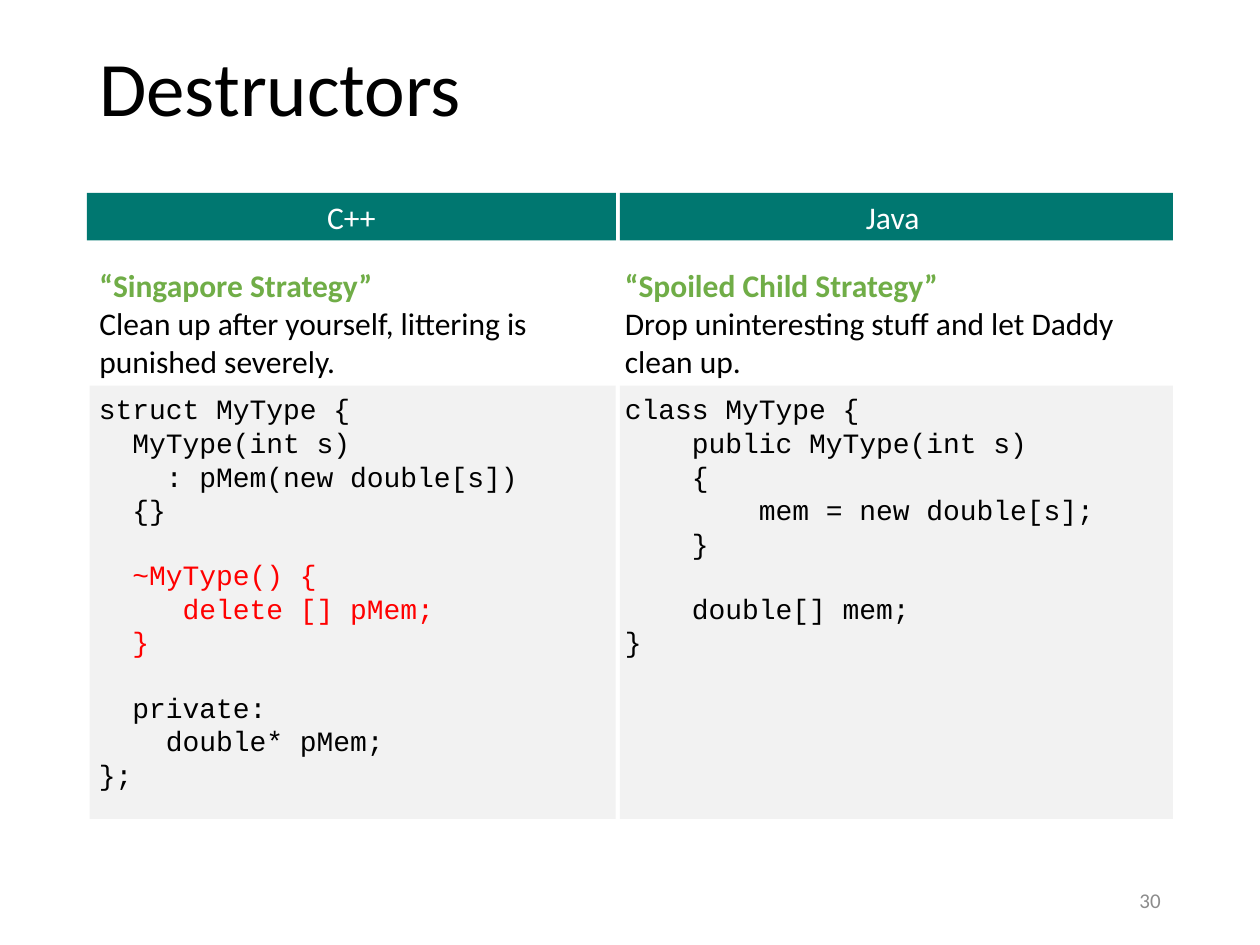
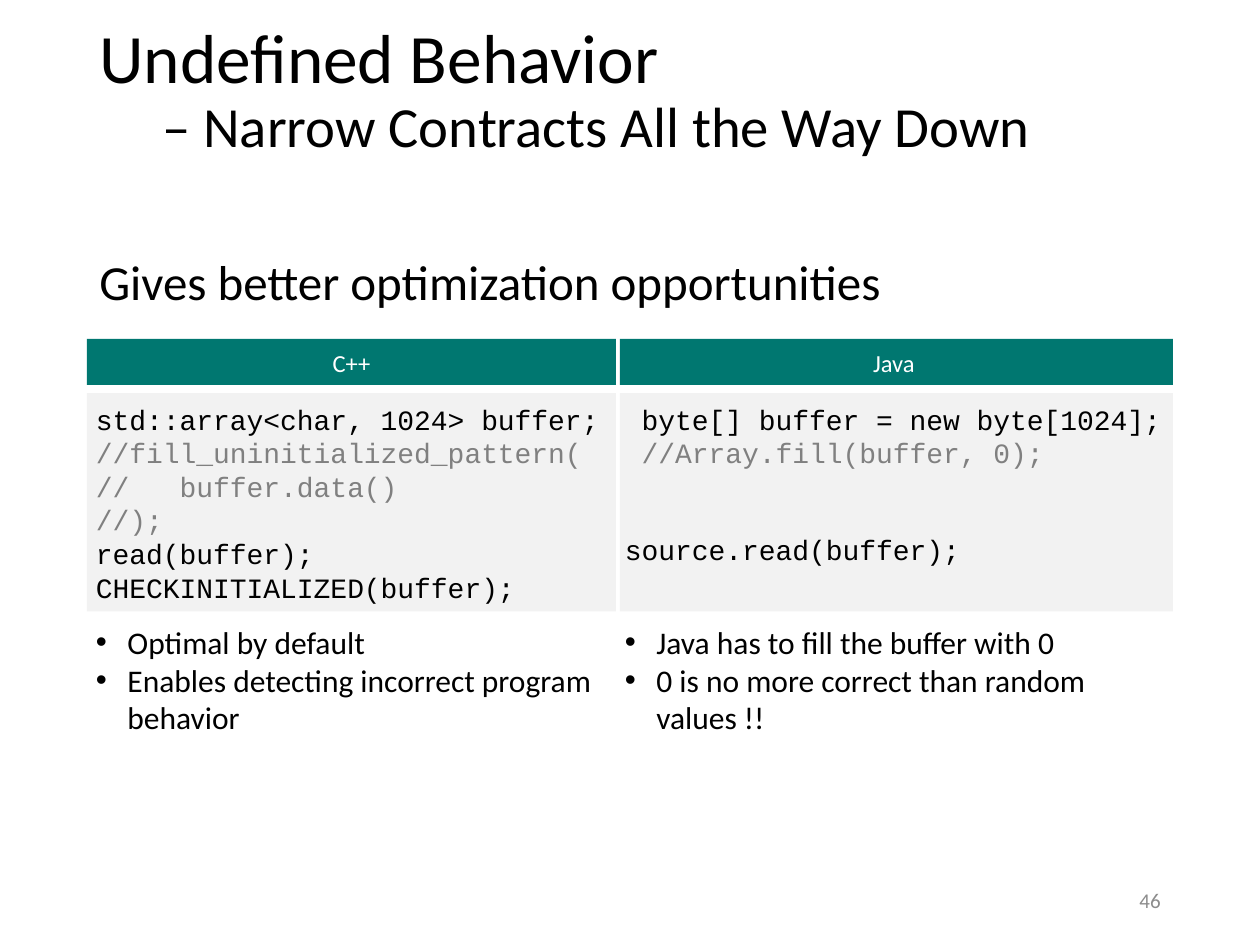
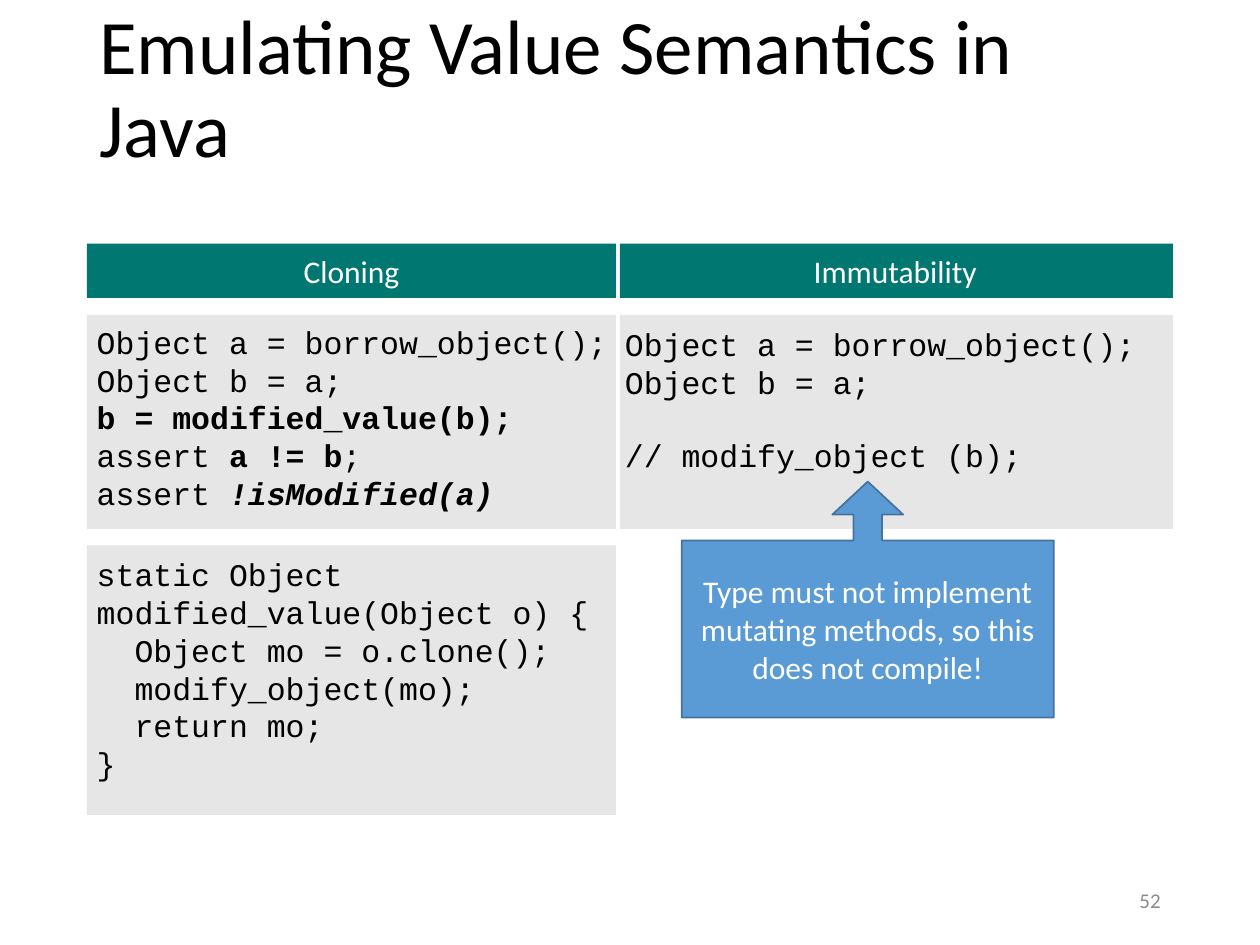
from lxml import etree
from pptx import Presentation
from pptx import util as u
from pptx.dml.color import RGBColor
from pptx.enum import shapes, text
from pptx.oxml.ns import qn

COLORS = {
    "black": "000000", "white": "FFFFFF", "teal": "007770", "green": "70AD47",
    "pale": "F2F2F2", "gray": "E7E6E6", "comment": "808080", "number": "8C8C8C",
    "red": "FF0000", "blue": "5B9BD5", "blue_edge": "43739E",
}
BODY, CODE = "Calibri", "Courier New"
CODE_LEADING = 1.13
SLIDE_WIDTH, SLIDE_HEIGHT = 720, 540
# Left edge, width and right inset of the band for the two columns
LEFT, RIGHT = (49.7, 302.3), (354.2, 316.1)
TITLE_BOX = (49.7, 0, 620.6, 104.4)
BULLET_INDENT = 18
PLAIN_INSETS = (7.2, 3.6, 7.2, 3.6)


def rgb(name):
    return RGBColor.from_string(COLORS[name])


def in_column(column, top, height):
    left, width = column
    return left, top, width, height


def add_box(page, box, fill=None, insets=PLAIN_INSETS, anchor="TOP", kind="RECTANGLE"):
    """Add a text box, or a filled shape when a fill is named."""
    lengths = [u.Pt(value) for value in box]
    if fill:
        shape = page.shapes.add_shape(shapes.MSO_SHAPE[kind], *lengths)
        shape.shadow.inherit = False
        shape.fill.solid()
        shape.fill.fore_color.rgb = rgb(fill)
        shape.line.fill.background()
    else:
        shape = page.shapes.add_textbox(*lengths)
    frame = shape.text_frame
    frame.word_wrap = True
    frame.vertical_anchor = text.MSO_ANCHOR[anchor]
    for side, inset in zip(("left", "top", "right", "bottom"), insets):
        setattr(frame, f"margin_{side}", u.Pt(inset))
    return shape


def add_span(para, words, color="black", **style):
    span = para.add_run()
    span.text = words
    for name, value in {"name": BODY, **style}.items():
        setattr(span.font, name, u.Pt(value) if name == "size" else value)
    span.font.color.rgb = rgb(color)


def next_para(frame, **layout):
    """Return the empty first paragraph, or a new one, with its layout set."""
    para = frame.paragraphs[0]
    if para.runs:
        para = frame.add_paragraph()
    for name, value in {"alignment": text.PP_ALIGN.LEFT, **layout}.items():
        setattr(para, name, value)
    return para


def set_bullet(para):
    layout = para._p.get_or_add_pPr()
    layout.set("marL", str(u.Pt(BULLET_INDENT)))
    layout.set("indent", str(-u.Pt(BULLET_INDENT)))
    etree.SubElement(layout, qn("a:buFont"), typeface="Arial")
    etree.SubElement(layout, qn("a:buChar"), char="•")


def add_title(page, *lines):
    """Each line is its words and its size; later lines start at a tab."""
    frame = add_box(page, TITLE_BOX, anchor="MIDDLE").text_frame
    para = next_para(frame, line_spacing=0.9)
    for index, (words, size) in enumerate(lines):
        if index:
            para.add_line_break()
            words = "\t" + words
        add_span(para, words, size=size)


def add_page_number(page, number):
    frame = add_box(page, (508.3, 500, 162, 29), anchor="MIDDLE").text_frame
    para = next_para(frame, alignment=text.PP_ALIGN.RIGHT)
    add_span(para, str(number), "number", size=12)


def add_bands(page, names, top, height, size, inset, right_inset):
    for column, name, side in zip((LEFT, RIGHT), names, (0, right_inset)):
        band = add_box(page, in_column(column, top, height), "teal", (0, inset, side, inset))
        para = next_para(band.text_frame, alignment=text.PP_ALIGN.CENTER)
        add_span(para, name, "white", size=size)


def add_code(page, box, lines, size, insets, fill="pale"):
    """A line is a string or (words, style) spans; an empty line opens a gap."""
    frame = add_box(page, box, fill, insets).text_frame
    gap = 0
    for line in lines:
        if not line:
            gap += size * CODE_LEADING
            continue
        para = next_para(frame, space_before=u.Pt(gap))
        gap = 0
        spans = [(line, {})] if isinstance(line, str) else line
        for words, style in spans:
            add_span(para, words, name=CODE, size=size, **style)


def add_strategy(page, column, inset, name, advice):
    frame = add_box(page, in_column(column, 152, 34), insets=(inset, 0, 0, 0)).text_frame
    add_span(next_para(frame), name, "green", size=18, bold=True)
    add_span(next_para(frame), advice, size=18)


def add_bullets(page, box, inset, lines):
    frame = add_box(page, box, insets=(inset, 6.5, 0, 0)).text_frame
    for line in lines:
        para = next_para(frame)
        set_bullet(para)
        add_span(para, line, size=18)


def add_callout(page, box, words):
    callout = add_box(page, box, "blue", anchor="MIDDLE", kind="UP_ARROW_CALLOUT")
    callout.line.color.rgb = rgb("blue_edge")
    callout.line.width = u.Pt(1)
    for index, value in enumerate((0.12, 0.15, 0.14, 0.75)):
        callout.adjustments[index] = value
    para = next_para(callout.text_frame, alignment=text.PP_ALIGN.CENTER)
    add_span(para, words, "white", size=18)


def build_destructors(page):
    add_title(page, ("Destructors", 44))
    add_bands(page, ("C++", "Java"), 110.2, 27.2, 18, 2.9, 4.3)
    add_strategy(page, LEFT, 7.2, "“Singapore Strategy”",
                 "Clean up after yourself, littering is punished severely.")
    add_strategy(page, RIGHT, 2.9, "“Spoiled Child Strategy”",
                 "Drop uninteresting stuff and let Daddy clean up.")
    red = {"color": "red"}
    add_code(page, (51.2, 220.4, 300.6, 247.6), [
        "struct MyType {",
        "  MyType(int s)",
        "    : pMem(new double[s])",
        "  {}",
        "",
        [("  ~MyType() {", red)],
        [("     delete [] pMem;", red)],
        [("  }", red)],
        "",
        "  private:",
        "    double* pMem;",
        "};",
    ], 16, (5.3, 3.6, 0, 3.6))
    add_code(page, in_column(RIGHT, 220.4, 247.6), [
        "class MyType {",
        "    public MyType(int s)",
        "    {",
        "        mem = new double[s];",
        "    }",
        "",
        "    double[] mem;",
        "}",
    ], 16, (2.9, 3.6, 0, 3.6))


def build_undefined_behavior(page):
    add_title(page, ("Undefined Behavior", 39.6), ("– Narrow Contracts All the Way Down", 32.4))
    claim = add_box(page, (49.7, 144, 620.6, 44)).text_frame
    add_span(next_para(claim, line_spacing=0.9), "Gives better optimization opportunities", size=28)
    add_bands(page, ("C++", "Java"), 193.7, 26.3, 14, 5, 2.9)
    comment = {"color": "comment"}
    add_code(page, in_column(LEFT, 224.6, 124.8), [
        "std::array<char, 1024> buffer;",
        [("//fill_uninitialized_pattern(", comment)],
        [("//   buffer.data()", comment)],
        [("//);", comment)],
        "read(buffer);",
        "CHECKINITIALIZED(buffer);",
    ], 16, (5.2, 5.2, 0, 5.2))
    add_code(page, in_column(RIGHT, 224.6, 124.8), [
        " byte[] buffer = new byte[1024];",
        [(" //Array.fill(buffer, 0);", comment)],
        "",
        "",
        "source.read(buffer);",
    ], 16, (2.9, 5.2, 0, 5.2))
    add_bullets(page, in_column(LEFT, 349.4, 64), 5.2,
                ["Optimal by default", "Enables detecting incorrect program behavior"])
    add_bullets(page, in_column(RIGHT, 349.4, 121.6), 2.9,
                ["Java has to fill the buffer with 0", "0 is no more correct than random values !!"])


def build_value_semantics(page):
    add_title(page, ("Emulating Value Semantics in Java", 44))
    add_bands(page, ("Cloning", "Immutability"), 139.2, 31, 18, 5, 1.4)
    bold = {"bold": True}
    add_code(page, in_column(LEFT, 180, 122.3), [
        "Object a = borrow_object();",
        "Object b = a;",
        [("b = modified_value(b);", bold)],
        [("assert ", {}), ("a != b", bold), (";", {})],
        [("assert ", {}), ("!isModified(a)", {"bold": True, "italic": True})],
    ], 18, (5.6, 4.5, 0, 4.5), "gray")
    add_code(page, in_column(LEFT, 311.7, 154), [
        "static Object",
        "modified_value(Object o) {",
        "  Object mo = o.clone();",
        "  modify_object(mo);",
        "  return mo;",
        "}",
    ], 18, (5.6, 5.6, 0, 5.6), "gray")
    add_code(page, in_column(RIGHT, 180, 122.3), [
        "Object a = borrow_object();",
        "Object b = a;",
        "",
        "// modify_object (b);",
    ], 18, (2.9, 5.6, 0, 5.6), "gray")
    add_callout(page, (389.6, 275.2, 212.6, 134.8),
                "Type must not implement mutating methods, so this does not compile!")


def main():
    deck = Presentation()
    deck.slide_width, deck.slide_height = u.Pt(SLIDE_WIDTH), u.Pt(SLIDE_HEIGHT)
    builders = {30: build_destructors, 46: build_undefined_behavior, 52: build_value_semantics}
    for number, build in builders.items():
        page = deck.slides.add_slide(deck.slide_layouts[6])
        build(page)
        add_page_number(page, number)
    deck.save("out.pptx")


if __name__ == "__main__":
    main()
